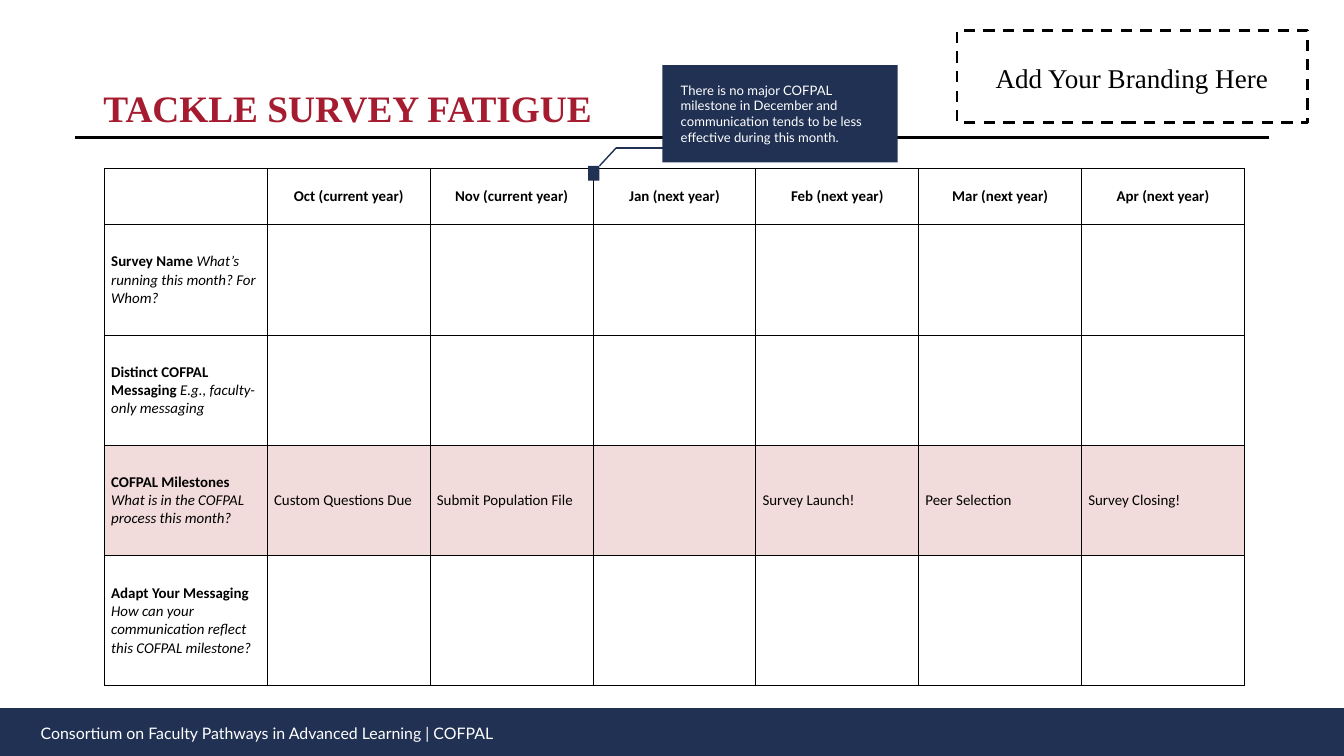
import pptx
import pptx.dml.color
import pptx.enum.dml
import pptx.enum.shapes
import pptx.enum.text
import pptx.oxml
import pptx.oxml.ns
import pptx.util
import lxml.etree

Cm = pptx.util.Cm
Pt = pptx.util.Pt
RGB = pptx.dml.color.RGBColor.from_string
ALIGN = pptx.enum.text.PP_ALIGN
RECTANGLE = pptx.enum.shapes.MSO_SHAPE.RECTANGLE
STRAIGHT = pptx.enum.shapes.MSO_CONNECTOR.STRAIGHT

THEME = {
    "navy": RGB("213153"),
    "crimson": RGB("A51C30"),
    "pink": RGB("F2DCDB"),
    "black": RGB("000000"),
    "white": RGB("FFFFFF"),
    "title": {"name": "Times New Roman", "size": Pt(40), "bold": True},
    "branding": {"name": "Times New Roman", "size": Pt(29)},
    "footer": {"name": "Lato", "size": Pt(17)},
    "callout": {"name": "Lato", "size": Pt(14)},
    "cell": {"name": "Calibri", "size": Pt(16), "bold": False, "italic": False},
    "cell_bold": {"name": "Calibri", "size": Pt(16), "bold": True, "italic": False},
    "cell_italic": {"name": "Calibri", "size": Pt(16), "bold": False, "italic": True},
}


def add_run(paragraph, text, style, color):
    run = paragraph.add_run()
    run.text = text
    for attribute, value in THEME[style].items():
        setattr(run.font, attribute, value)
    run.font.color.rgb = THEME[color]


def add_text(box, text, style, color, align, spacing):
    label = slide.shapes.add_textbox(*map(Cm, box))
    frame = label.text_frame
    for attribute, value in {
        "word_wrap": True,
        "auto_size": pptx.enum.text.MSO_AUTO_SIZE.SHAPE_TO_FIT_TEXT,
        "margin_left": 0, "margin_right": 0, "margin_top": 0, "margin_bottom": 0,
    }.items():
        setattr(frame, attribute, value)
    paragraph = frame.paragraphs[0]
    paragraph.alignment = align
    paragraph.line_spacing = spacing
    add_run(paragraph, text, style, color)


deck = pptx.Presentation()
deck.slide_width, deck.slide_height = Cm(50.8), Cm(28.58)
slide = deck.slides.add_slide(deck.slide_layouts[6])

lines = []
title_rule = slide.shapes.add_connector(STRAIGHT, Cm(2.84), Cm(5.21), Cm(47.96), Cm(5.21))
lines.append((title_rule, "black", 3))

footer_band = slide.shapes.add_shape(RECTANGLE, 0, Cm(26.77), Cm(50.8), Cm(1.81))
add_text((3.91, 2.92, 42.88, 1.88), "TACKLE SURVEY FATIGUE", "title", "crimson", ALIGN.LEFT, Pt(56))
add_text((0, 27.23, 20.19, 0.79), "Consortium on Faculty Pathways in Advanced Learning | COFPAL",
         "footer", "white", ALIGN.CENTER, Pt(23.8))

branding_frame = slide.shapes.add_shape(RECTANGLE, Cm(36.17), Cm(1.14), Cm(13.26), Cm(3.5))
branding_frame.shadow.inherit = False
branding_frame.fill.background()
branding_frame.line.color.rgb = THEME["black"]
branding_frame.line.width = Pt(3)
branding_frame.line.dash_style = pptx.enum.dml.MSO_LINE.DASH
add_text((37.26, 2.13, 11.05, 1.37), "Add Your Branding Here", "branding", "black", ALIGN.CENTER, Pt(40.6))

months = ["Oct (current year)", "Nov (current year)", "Jan (next year)",
          "Feb (next year)", "Mar (next year)", "Apr (next year)"]
topics = [
    ("Survey Name ", "What’s running this month? For Whom?"),
    ("Distinct COFPAL Messaging ", "E.g., faculty-only messaging"),
    ("COFPAL Milestones ", "What is in the COFPAL process this month?"),
    ("Adapt Your Messaging ", "How can your communication reflect this COFPAL milestone?"),
]
milestones = ["Custom Questions Due", "Submit Population File", "",
              "Survey Launch!", "Peer Selection", "Survey Closing!"]
milestone_row = 3
row_heights = [2.13, 4.17, 4.17, 4.17, 4.9]

planner = slide.shapes.add_table(len(row_heights), len(months) + 1,
                                 Cm(3.95), Cm(6.37), Cm(43.08), Cm(19.54)).table
planner.first_row = planner.horz_banding = False
for column in planner.columns:
    column.width = Cm(6.155)
for row, height in zip(planner.rows, row_heights):
    row.height = Cm(height)

for row_index, row in enumerate(planner.rows):
    for cell in row.cells:
        cell.vertical_anchor = pptx.enum.text.MSO_ANCHOR.MIDDLE
        properties = cell._tc.get_or_add_tcPr()
        for side in ("lnL", "lnR", "lnT", "lnB"):
            properties.append(pptx.oxml.parse_xml(
                f'<a:{side} {pptx.oxml.ns.nsdecls("a")} w="12700"><a:solidFill>'
                f'<a:srgbClr val="{THEME["black"]}"/></a:solidFill></a:{side}>'))
        if row_index == milestone_row:
            cell.fill.solid()
            cell.fill.fore_color.rgb = THEME["pink"]
        else:
            cell.fill.background()

for column_index, (month, milestone) in enumerate(zip(months, milestones), 1):
    heading = planner.cell(0, column_index).text_frame.paragraphs[0]
    heading.alignment = ALIGN.CENTER
    add_run(heading, month, "cell_bold", "black")
    if milestone:
        entry = planner.cell(milestone_row, column_index).text_frame.paragraphs[0]
        add_run(entry, milestone, "cell", "black")

for row_index, (topic, prompt) in enumerate(topics, 1):
    entry = planner.cell(row_index, 0).text_frame.paragraphs[0]
    add_run(entry, topic, "cell_bold", "black")
    add_run(entry, prompt, "cell_italic", "black")

callout = slide.shapes.add_shape(RECTANGLE, Cm(25.04), Cm(2.46), Cm(8.89), Cm(3.68))
add_text((25.73, 3.1, 7.62, 2.39),
         "There is no major COFPAL milestone in December and communication "
         "tends to be less effective during this month.",
         "callout", "white", ALIGN.LEFT, None)
december_marker = slide.shapes.add_shape(RECTANGLE, Cm(22.23), Cm(6.27), Cm(0.43), Cm(0.56))
for block in (footer_band, callout, december_marker):
    block.shadow.inherit = False
    block.fill.solid()
    block.fill.fore_color.rgb = THEME["navy"]
    block.line.fill.background()

for ends in ((23.29, 5.59, 27.97, 5.59), (22.66, 6.27, 23.29, 5.59)):
    leader = slide.shapes.add_connector(STRAIGHT, *map(Cm, ends))
    lines.append((leader, "navy", 1.5))

for connector, color, width in lines:
    connector.line.color.rgb = THEME[color]
    connector.line.width = Pt(width)
    lxml.etree.SubElement(connector._element.spPr, pptx.oxml.ns.qn("a:effectLst"))

deck.save("out.pptx")
